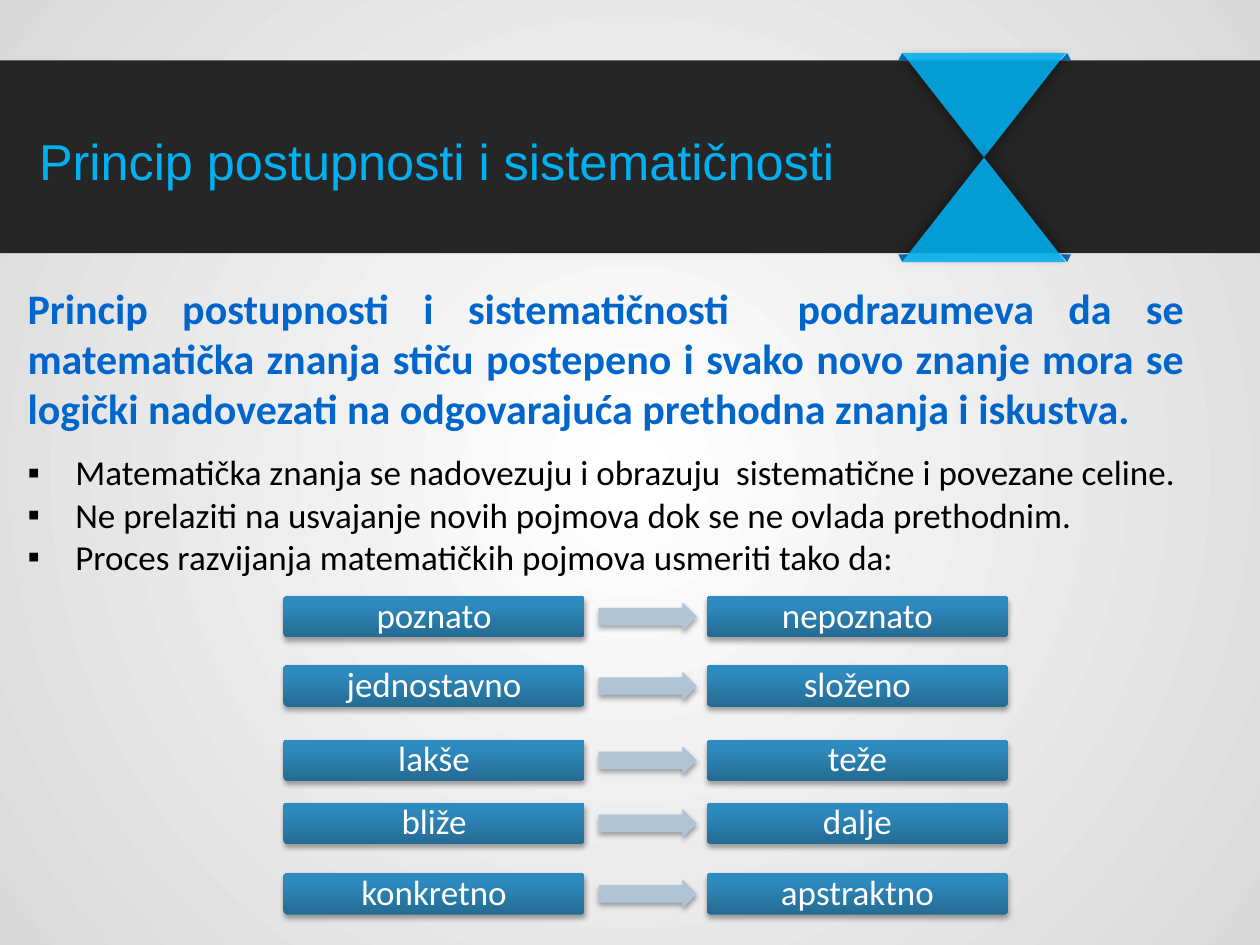
from pptx import Presentation
from pptx.dml.color import RGBColor
from pptx.enum.shapes import MSO_SHAPE
from pptx.enum.text import MSO_ANCHOR, PP_ALIGN
from pptx.oxml import parse_xml
from pptx.oxml.ns import nsdecls, qn
from pptx.util import Inches, Pt

RECTANGLE = MSO_SHAPE.RECTANGLE
TRIANGLE = MSO_SHAPE.ISOSCELES_TRIANGLE
ROUNDED = MSO_SHAPE.ROUNDED_RECTANGLE
ARROW = MSO_SHAPE.RIGHT_ARROW
MIDDLE = MSO_ANCHOR.MIDDLE
TOP = MSO_ANCHOR.TOP
LEFT = PP_ALIGN.LEFT
CENTER = PP_ALIGN.CENTER
JUSTIFY = PP_ALIGN.JUSTIFY

TITLE = "Princip postupnosti i sistematičnosti"
DEFINITION = (
    "Princip postupnosti i sistematičnosti  podrazumeva da se matematička znanja "
    "stiču postepeno i svako novo znanje mora se logički nadovezati na "
    "odgovarajuća prethodna znanja i iskustva."
)
RULES = [
    "Matematička znanja se nadovezuju i obrazuju  sistematične i povezane celine.",
    "Ne prelaziti na usvajanje novih pojmova dok se ne ovlada prethodnim.",
    "Proces razvijanja matematičkih pojmova usmeriti tako da:",
]
STEPS = [
    (4.73, "poznato", "nepoznato"),
    (5.28, "jednostavno", "složeno"),
    (5.87, "lakše", "teže"),
    (6.37, "bliže", "dalje"),
    (6.93, "konkretno", "apstraktno"),
]
BACKDROP_STOPS = [(0, "FFFFFF"), (100, "D9D9D9")]
LABEL_STOPS = [(0, "246B92"), (80, "2E8ABE"), (100, "2C8CC2")]
BACKDROP_SHADE = (
    '<a:path path="circle"><a:fillToRect l="50000" t="50000" r="50000" b="50000"/></a:path>'
)
LABEL_SHADE = '<a:lin ang="16200000" scaled="0"/>'
STEP_SHADOW = (35, 3.1, 1.8, 90)


def color(code):
    return RGBColor.from_string(code)


def apply(target, values):
    for name, value in values.items():
        setattr(target, name, value)


def set_gradient(holder, stops, shade):
    marks = "".join(
        f'<a:gs pos="{position * 1000}"><a:srgbClr val="{code}"/></a:gs>'
        for position, code in stops
    )
    gradient = parse_xml(
        f'<a:gradFill {nsdecls("a")} rotWithShape="1"><a:gsLst>{marks}</a:gsLst>{shade}</a:gradFill>'
    )
    holder.replace(holder.find(qn("a:solidFill")), gradient)


def paint(shape, code, alpha=None, shadow=None):
    shape.fill.solid()
    shape.fill.fore_color.rgb = color(code)
    shape.line.fill.background()
    shape.shadow.inherit = False
    properties = shape.element.spPr
    if alpha:
        tint = properties.find(qn("a:solidFill")).find(qn("a:srgbClr"))
        tint.append(parse_xml(f'<a:alpha {nsdecls("a")} val="{alpha * 1000}"/>'))
    if shadow:
        opacity, blur, distance, angle = shadow
        properties.find(qn("a:effectLst")).append(parse_xml(
            f'<a:outerShdw {nsdecls("a")} blurRad="{Pt(blur)}" dist="{Pt(distance)}" '
            f'dir="{angle * 60000}" rotWithShape="0"><a:srgbClr val="000000">'
            f'<a:alpha val="{opacity * 1000}"/></a:srgbClr></a:outerShdw>'
        ))


def add_block(slide, kind, box, code, **effects):
    block = slide.shapes.add_shape(kind, *map(Inches, box))
    paint(block, code, **effects)
    return block


def add_fold(slide, tip, side, tip_y, base_y):
    builder = slide.shapes.build_freeform(Inches(tip), Inches(tip_y), scale=1.0)
    base = [(tip + side * 0.03, base_y), (tip - side * 0.05, base_y)]
    builder.add_line_segments([(Inches(x), Inches(y)) for x, y in base], close=True)
    paint(builder.convert_to_shape(), "0070C0")


def write(frame, lines, frame_format, paragraph_format, font_format):
    apply(frame, {"word_wrap": True, **frame_format})
    for index, line in enumerate(lines):
        paragraph = frame.add_paragraph() if index else frame.paragraphs[0]
        apply(paragraph, paragraph_format)
        run = paragraph.add_run()
        run.text = line
        font_values = dict(font_format)
        run.font.color.rgb = color(font_values.pop("color"))
        apply(run.font, font_values)


def add_text(slide, box, lines, alignment, font_format):
    frame = slide.shapes.add_textbox(*map(Inches, box)).text_frame
    write(frame, lines, {"vertical_anchor": TOP}, {"alignment": alignment}, font_format)
    return frame


def add_bullets(frame):
    for paragraph in frame.paragraphs:
        properties = paragraph._p.get_or_add_pPr()
        properties.set("marL", str(Inches(0.38)))
        properties.set("indent", str(Inches(-0.38)))
        properties.append(parse_xml(f'<a:buFont {nsdecls("a")} typeface="Arial"/>'))
        properties.append(parse_xml(f'<a:buChar {nsdecls("a")} char="▪"/>'))


def add_label(slide, left, top, word):
    label = add_block(slide, ROUNDED, (left, top, 2.39, 0.33), "2E8ABE", shadow=STEP_SHADOW)
    label.adjustments[0] = 0.1
    set_gradient(label.element.spPr, LABEL_STOPS, LABEL_SHADE)
    sides = ("left", "top", "right", "bottom")
    margins = {f"margin_{side}": Inches(0.08) for side in sides}
    write(
        label.text_frame, [word], {"vertical_anchor": MIDDLE, **margins},
        {"alignment": CENTER, "line_spacing": 0.9},
        {"name": "Calibri", "size": Pt(20), "color": "FFFFFF"},
    )


def add_step(slide, top, start, goal):
    add_label(slide, 2.25, top, start)
    arrow = add_block(slide, ARROW, (4.75, top + 0.05, 0.78, 0.23), "B0C4D6", shadow=STEP_SHADOW)
    arrow.adjustments[0] = 0.6
    add_label(slide, 5.61, top, goal)


def add_banner(slide):
    for tip, side in ((7.16, -1), (8.47, 1)):
        add_fold(slide, tip, side, 0.42, 0.48)
        add_fold(slide, tip, side, 2.08, 2.02)
    add_block(slide, RECTANGLE, (0, 0.48, 10, 1.53), "262626")
    for top, angle in ((0.42, 90), (1.25, 270)):
        ribbon = add_block(
            slide, TRIANGLE, (7.16, top, 1.3, 0.83), "00B0F0", alpha=87, shadow=(40, 7, 3, angle)
        )
        if angle == 90:
            ribbon.element.spPr.get_or_add_xfrm().set("flipV", "1")


def add_title(slide):
    title = slide.shapes.title
    slide.shapes._spTree.append(title.element)
    places = zip(("left", "top", "width", "height"), map(Inches, (0.21, 0.92, 7.12, 0.7)))
    apply(title, dict(places))
    write(
        title.text_frame, [TITLE], {"vertical_anchor": MIDDLE}, {"alignment": LEFT},
        {"name": "Arial", "size": Pt(28.8), "color": "00B0F0"},
    )


def main():
    deck = Presentation()
    apply(deck, {"slide_width": Inches(10), "slide_height": Inches(7.5)})
    slide = deck.slides.add_slide(deck.slide_layouts[5])
    slide.background.fill.solid()
    set_gradient(slide.element.find(".//" + qn("p:bgPr")), BACKDROP_STOPS, BACKDROP_SHADE)
    add_banner(slide)
    add_title(slide)
    rules = add_text(
        slide, (0.12, 3.53, 9.62, 1.11), RULES, LEFT,
        {"name": "Calibri", "size": Pt(20), "color": "000000"},
    )
    add_bullets(rules)
    add_text(
        slide, (0.12, 2.19, 9.38, 1.31), [DEFINITION], JUSTIFY,
        {"name": "Calibri", "size": Pt(24), "color": "0066CC", "bold": True},
    )
    for step in STEPS:
        add_step(slide, *step)
    deck.save("out.pptx")


if __name__ == "__main__":
    main()
